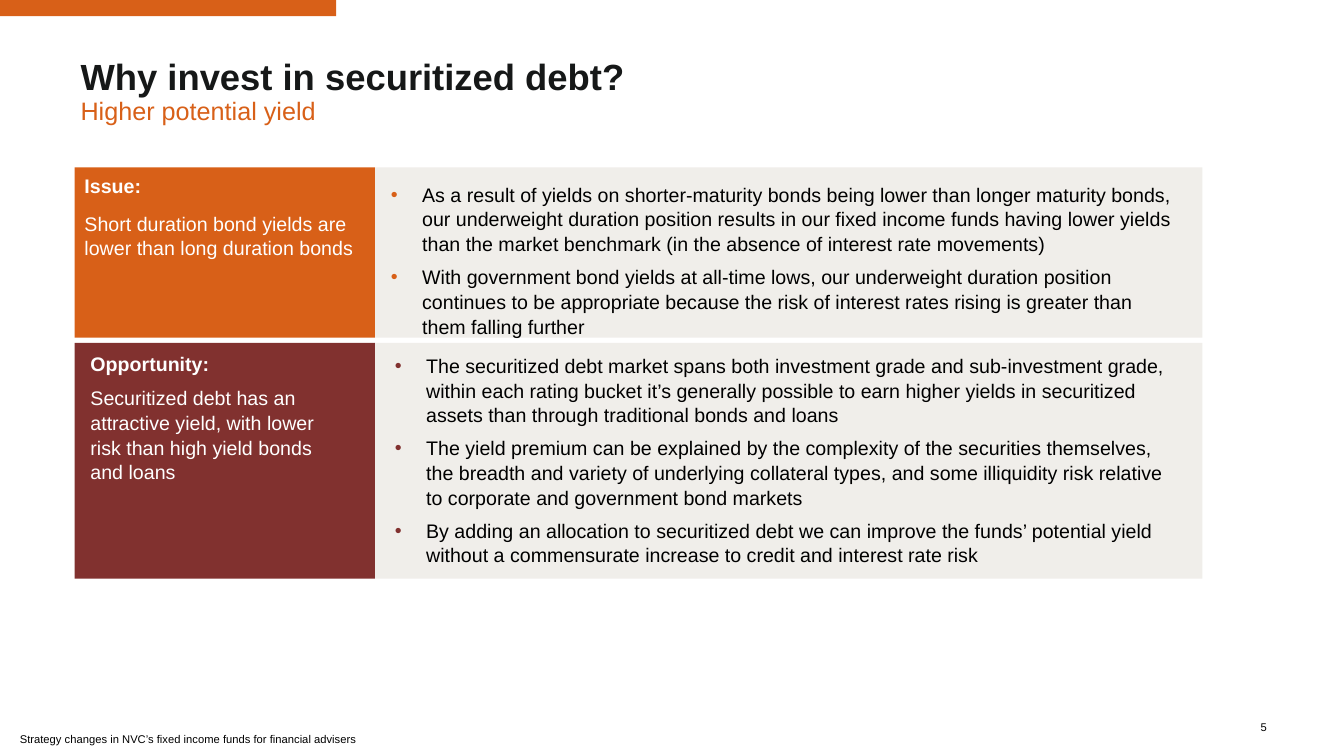
from dataclasses import dataclass

from lxml.etree import SubElement
from pptx import Presentation
from pptx.dml.color import RGBColor
from pptx.enum.shapes import MSO_SHAPE
from pptx.enum.text import MSO_ANCHOR, PP_ALIGN
from pptx.oxml.ns import qn
from pptx.shapes.autoshape import Shape
from pptx.slide import Slide
from pptx.text.text import TextFrame, _Paragraph
from pptx.util import Cm, Pt

ORANGE = RGBColor(0xD8, 0x60, 0x18)
MAROON = RGBColor(0x81, 0x31, 0x2F)
PALE = RGBColor(0xF0, 0xEE, 0xEA)
INK = RGBColor(0x16, 0x18, 0x18)
BLACK = RGBColor(0, 0, 0)
WHITE = RGBColor(0xFF, 0xFF, 0xFF)

PANEL_LEFT, LABEL_WIDTH, DETAIL_WIDTH = 1.88, 7.57, 20.85
DETAIL_LEFT = PANEL_LEFT + LABEL_WIDTH
BULLET_INDENT = Cm(0.79)
BODY_SPACING = 1.05


@dataclass
class Box:
    """A rectangle in centimetres."""
    left: float
    top: float
    width: float
    height: float

    def lengths(self) -> tuple[Cm, Cm, Cm, Cm]:
        return Cm(self.left), Cm(self.top), Cm(self.width), Cm(self.height)


@dataclass
class Panel:
    """One row: a coloured label beside a list of bullets."""
    top: float
    height: float
    color: RGBColor
    label_box: Box
    heading: str
    summary: str
    summary_gap: float
    bullet_box: Box
    bullets: list[str]


PANELS = [
    Panel(4.22, 4.29, ORANGE, Box(PANEL_LEFT, 4.22, LABEL_WIDTH, 4.29),
          "Issue:",
          "Short duration bond yields are lower than long duration bonds", 9.5,
          Box(9.6, 4.45, 20.24, 4.06),
          ["As a result of yields on shorter-maturity bonds being lower than longer maturity bonds, "
           "our underweight duration position results in our fixed income funds having lower yields "
           "than the market benchmark (in the absence of interest rate movements)",
           "With government bond yields at all-time lows, our underweight duration position "
           "continues to be appropriate because the risk of interest rates rising is greater than "
           "them falling further"]),
    Panel(8.64, 5.94, MAROON, Box(2.03, 8.71, 6.81, 4.45),
          "Opportunity:",
          "Securitized debt has an attractive yield, with lower risk than high yield bonds and loans", 7,
          Box(9.7, 8.76, 20.14, 5.46),
          ["The securitized debt market spans both investment grade and sub-investment grade, "
           "within each rating bucket it’s generally possible to earn higher yields in securitized "
           "assets than through traditional bonds and loans",
           "The yield premium can be explained by the complexity of the securities themselves, "
           "the breadth and variety of underlying collateral types, and some illiquidity risk relative "
           "to corporate and government bond markets",
           "By adding an allocation to securitized debt we can improve the funds’ potential yield "
           "without a commensurate increase to credit and interest rate risk"]),
]


def write_paragraph(paragraph: _Paragraph, text: str, size: float, color: RGBColor,
                    bold: bool = False, **layout) -> None:
    paragraph.text = text
    for name, value in ({"alignment": PP_ALIGN.LEFT} | layout).items():
        setattr(paragraph, name, value)
    font_format = {"name": "Arial", "size": Pt(size), "bold": bold}
    for name, value in font_format.items():
        setattr(paragraph.font, name, value)
    paragraph.font.color.rgb = color


def set_frame(frame: TextFrame, inset: bool = True, **values) -> None:
    frame_format = {"word_wrap": True, "vertical_anchor": MSO_ANCHOR.TOP}
    if not inset:
        sides = ("left", "top", "right", "bottom")
        frame_format |= {f"margin_{side}": 0 for side in sides}
    for name, value in (frame_format | values).items():
        setattr(frame, name, value)


def add_rectangle(slide: Slide, box: Box, color: RGBColor) -> Shape:
    shape = slide.shapes.add_shape(MSO_SHAPE.RECTANGLE, *box.lengths())
    shape.shadow.inherit = False
    shape.fill.solid()
    shape.fill.fore_color.rgb = color
    shape.line.fill.background()
    return shape


def add_text_frame(slide: Slide, box: Box, **values) -> TextFrame:
    frame = slide.shapes.add_textbox(*box.lengths()).text_frame
    set_frame(frame, **values)
    return frame


def add_bullet(paragraph: _Paragraph, color: RGBColor) -> None:
    properties = paragraph._p.get_or_add_pPr()
    properties.set("marL", str(BULLET_INDENT))
    properties.set("indent", str(-BULLET_INDENT))
    bullet_color = SubElement(properties, qn("a:buClr"))
    SubElement(bullet_color, qn("a:srgbClr"), val=str(color))
    SubElement(properties, qn("a:buFont"), typeface="Arial")
    SubElement(properties, qn("a:buChar"), char="•")


def add_panel(slide: Slide, panel: Panel) -> None:
    # Backgrounds
    add_rectangle(slide, Box(DETAIL_LEFT, panel.top, DETAIL_WIDTH, panel.height), PALE)
    full_label = Box(PANEL_LEFT, panel.top, LABEL_WIDTH, panel.height)
    label = add_rectangle(slide, full_label, panel.color)
    if panel.label_box != full_label:
        label = add_rectangle(slide, panel.label_box, panel.color)

    # Heading and summary
    frame = label.text_frame
    set_frame(frame)
    write_paragraph(frame.paragraphs[0], panel.heading, 14, WHITE, bold=True,
                    line_spacing=BODY_SPACING)
    write_paragraph(frame.add_paragraph(), panel.summary, 14, WHITE,
                    line_spacing=BODY_SPACING, space_before=Pt(panel.summary_gap))

    # Bullets
    frame = add_text_frame(slide, panel.bullet_box)
    for index, text in enumerate(panel.bullets):
        paragraph = frame.add_paragraph() if index else frame.paragraphs[0]
        add_bullet(paragraph, panel.color)
        write_paragraph(paragraph, text, 14, BLACK, line_spacing=BODY_SPACING,
                        space_before=Pt(3 if index else 0), space_after=Pt(3))


def add_title(slide: Slide) -> None:
    title = slide.shapes.title
    title.left, title.top, title.width, title.height = Box(2.03, 1.5, 14.12, 1.45).lengths()
    frame = title.text_frame
    set_frame(frame, inset=False)
    write_paragraph(frame.paragraphs[0], "Why invest in securitized debt?", 26, INK,
                    bold=True, line_spacing=0.9)
    write_paragraph(frame.add_paragraph(), "Higher potential yield", 18, ORANGE,
                    line_spacing=0.9, space_before=Pt(0))


def add_footer(slide: Slide) -> None:
    number = add_text_frame(slide, Box(31.22, 18.06, 0.71, 0.53), inset=False,
                            word_wrap=False, vertical_anchor=MSO_ANCHOR.MIDDLE)
    write_paragraph(number.paragraphs[0], "5", 8, BLACK, alignment=PP_ALIGN.RIGHT)
    footer = add_text_frame(slide, Box(0.25, 18.34, 9.19, 0.53))
    write_paragraph(footer.paragraphs[0],
                    "Strategy changes in NVC’s fixed income funds for financial advisers", 8, BLACK)


def main() -> None:
    presentation = Presentation()
    presentation.slide_width, presentation.slide_height = Cm(33.87), Cm(19.05)
    slide = presentation.slides.add_slide(presentation.slide_layouts.get_by_name("Title Only"))

    # Accent bar, title and footer
    add_rectangle(slide, Box(0, 0, 8.47, 0.41), ORANGE)
    add_title(slide)
    add_footer(slide)

    # Issue and opportunity
    for panel in PANELS:
        add_panel(slide, panel)
    presentation.save("out.pptx")


if __name__ == "__main__":
    main()
